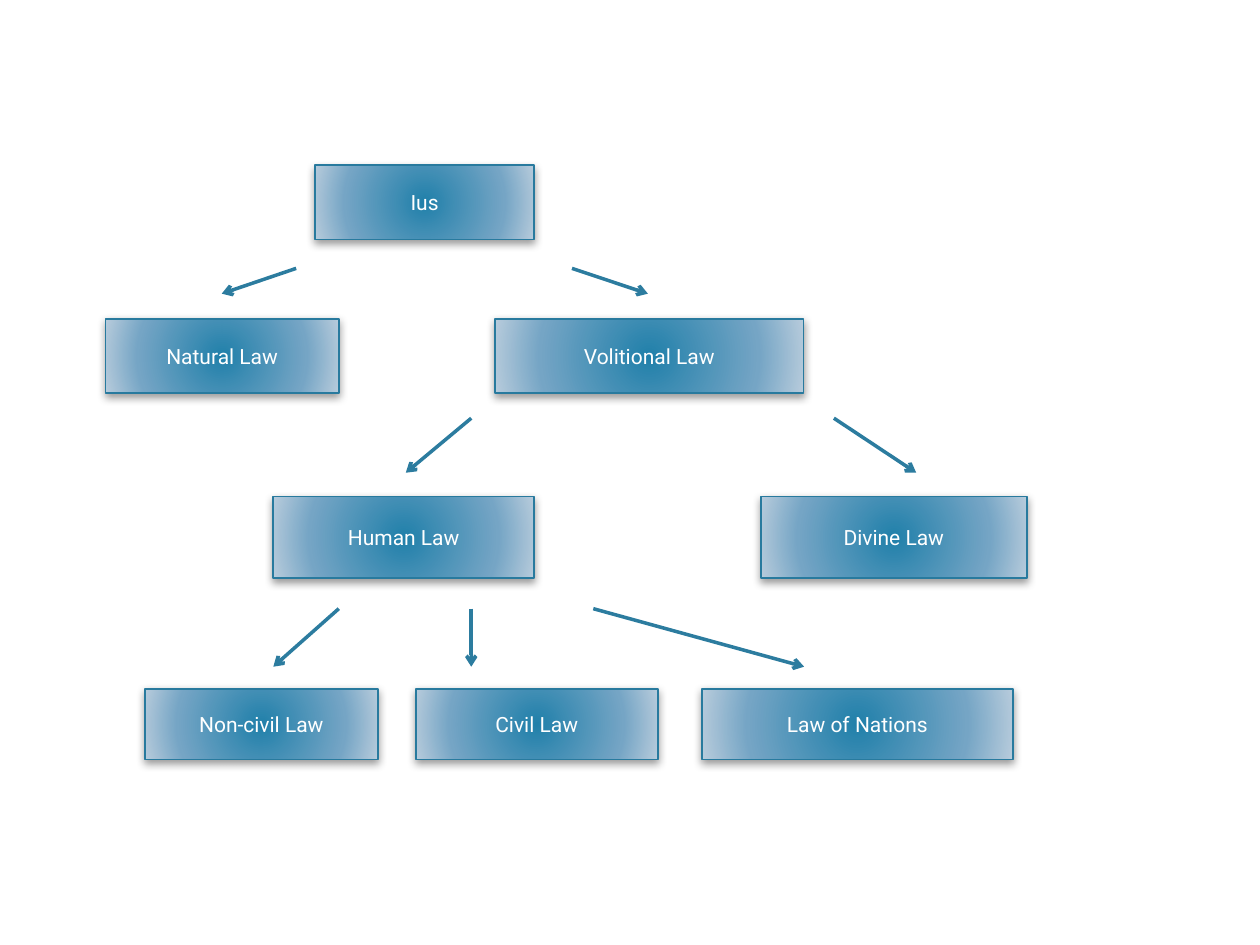
import pptx
import pptx.dml.color
import pptx.enum.shapes
import pptx.enum.text
import pptx.oxml
import pptx.oxml.ns
import pptx.util

Cm = pptx.util.Cm
Pt = pptx.util.Pt
RGBColor = pptx.dml.color.RGBColor

WHITE = RGBColor(0xFF, 0xFF, 0xFF)
BORDER = RGBColor(0x28, 0x7A, 0x9E)
ARROW = RGBColor(0x2C, 0x7C, 0x9F)
GRADIENT = (
    (0, RGBColor(0x21, 0x80, 0xAA)),
    (69, RGBColor(0x75, 0xA5, 0xC5)),
    (100, RGBColor(0xB8, 0xCC, 0xDC)),
)
NAMESPACE = pptx.oxml.ns.nsdecls("a")

BOX_ROWS = (
    (3.33, 1.5, (("Ius", 6.35, 4.42),)),
    (6.43, 1.5, (("Natural Law", 2.13, 4.7), ("Volitional Law", 9.98, 6.22))),
    (10.01, 1.65, (("Human Law", 5.51, 5.26), ("Divine Law", 15.34, 5.36))),
    (13.89, 1.42, (("Non-civil Law", 2.92, 4.7), ("Civil Law", 8.38, 4.88),
                   ("Law of Nations", 14.15, 6.27))),
)
ARROW_ROWS = (
    (5.41, 5.92, ((5.97, 4.47), (11.53, 13.06))),
    (8.43, 9.53, ((9.5, 8.18), (16.81, 18.47))),
    (12.27, 13.44, ((6.83, 5.51), (9.5, 9.5), (11.96, 16.21))),
)


class LawTree:
    """Draws the boxes and arrows of a law hierarchy on one page."""

    def __init__(self, page, font_name="Roboto", font_size=12):
        self.page = page
        self.font_name = font_name
        self.font_size = Pt(font_size)

    def append_xml(self, parent, xml):
        parent.append(pptx.oxml.parse_xml(xml))

    def add_box(self, label, left, top, width, height):
        box = self.page.shapes.add_shape(
            pptx.enum.shapes.MSO_SHAPE.RECTANGLE,
            Cm(left), Cm(top), Cm(width), Cm(height))
        properties = box._element.spPr
        stops = "".join(
            f'<a:gs pos="{position * 1000}"><a:srgbClr val="{color}"/></a:gs>'
            for position, color in GRADIENT)
        self.append_xml(
            properties,
            f'<a:gradFill {NAMESPACE} rotWithShape="1"><a:gsLst>{stops}</a:gsLst>'
            '<a:path path="circle"><a:fillToRect l="100000" t="100000" '
            'r="100000" b="100000"/></a:path></a:gradFill>')
        box.line.color.rgb = BORDER
        box.line.width = Pt(1)
        self.append_xml(
            properties,
            f'<a:effectLst {NAMESPACE}><a:outerShdw blurRad="{Pt(5)}" '
            f'dist="{Pt(2)}" dir="5400000" rotWithShape="0">'
            '<a:srgbClr val="000000"><a:alpha val="40000"/></a:srgbClr>'
            '</a:outerShdw></a:effectLst>')
        frame = box.text_frame
        frame.word_wrap = True
        frame.vertical_anchor = pptx.enum.text.MSO_ANCHOR.MIDDLE
        para = frame.paragraphs[0]
        para.text = label
        para.alignment = pptx.enum.text.PP_ALIGN.CENTER
        para.font.name = self.font_name
        para.font.size = self.font_size
        para.font.color.rgb = WHITE

    def add_arrow(self, start_x, start_y, end_x, end_y):
        arrow = self.page.shapes.add_connector(
            pptx.enum.shapes.MSO_CONNECTOR.STRAIGHT,
            Cm(start_x), Cm(start_y), Cm(end_x), Cm(end_y))
        arrow.line.color.rgb = ARROW
        arrow.line.width = Pt(2)
        self.append_xml(arrow.line._get_or_add_ln(),
                        f'<a:tailEnd {NAMESPACE} type="arrow"/>')
        self.append_xml(arrow._element.spPr, f"<a:effectLst {NAMESPACE}/>")


def main():
    deck = pptx.Presentation()
    deck.slide_width = Cm(25.4)
    deck.slide_height = Cm(19.05)
    tree = LawTree(deck.slides.add_slide(deck.slide_layouts[6]))
    for top, height, boxes in BOX_ROWS:
        for label, left, width in boxes:
            tree.add_box(label, left, top, width, height)
    for start_y, end_y, arrows in ARROW_ROWS:
        for start_x, end_x in arrows:
            tree.add_arrow(start_x, start_y, end_x, end_y)
    deck.save("out.pptx")


if __name__ == "__main__":
    main()
